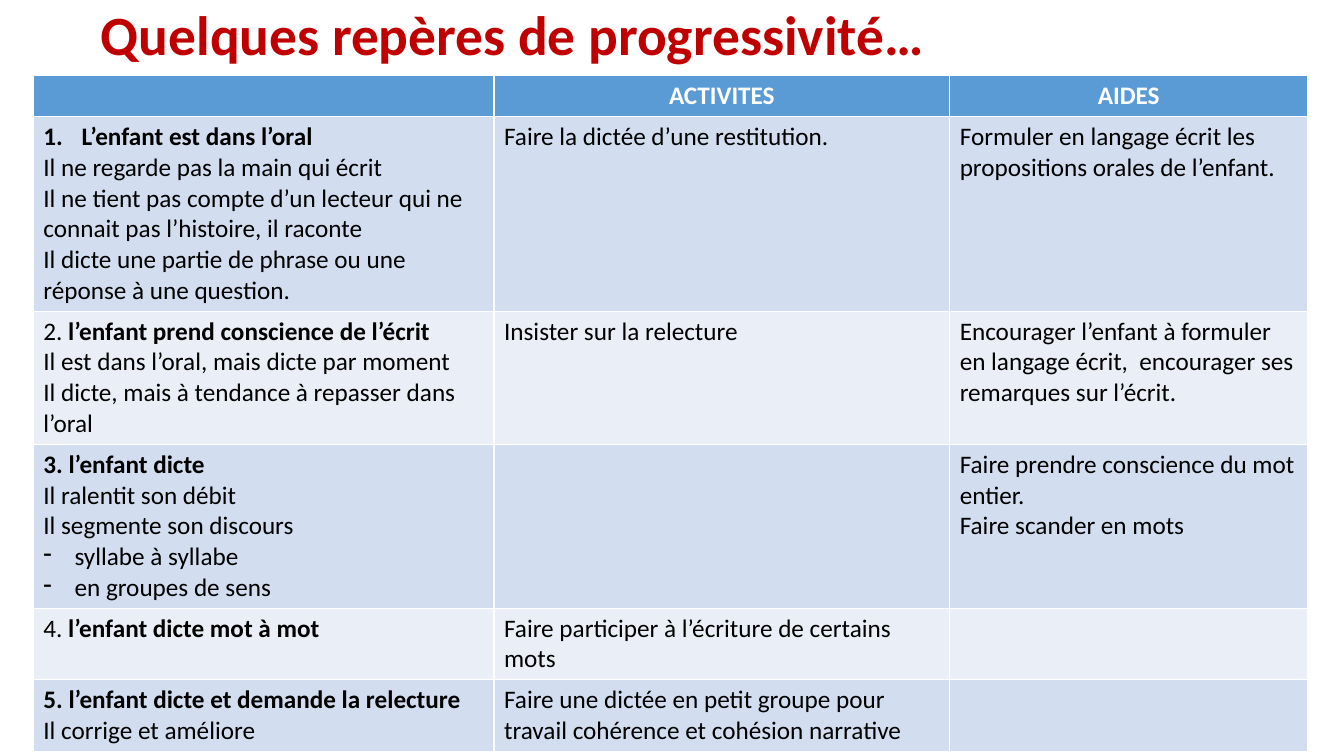
from typing import NamedTuple

from lxml.etree import SubElement
from pptx import Presentation
from pptx.dml.color import RGBColor
from pptx.enum.text import MSO_ANCHOR, MSO_AUTO_SIZE, PP_ALIGN
from pptx.oxml.ns import qn
from pptx.util import Inches, Pt

RED = RGBColor(0xC0, 0x00, 0x00)
BLUE = RGBColor(0x5B, 0x9B, 0xD5)
BAND_DARK = RGBColor(0xD2, 0xDE, 0xEF)
BAND_LIGHT = RGBColor(0xEA, 0xEF, 0xF7)
WHITE = RGBColor(0xFF, 0xFF, 0xFF)
BLACK = RGBColor(0x00, 0x00, 0x00)

FONT = "Calibri"
SLIDE_SIZE = (13.33, 7.5)
TITLE_BOX = (0.9, 0, 11.5, 0.75)
TABLE_BOX = (0.33, 0.75, 12.64, 6.7)
COLUMN_WIDTHS = (4.57, 4.52, 3.55)
ROW_LINES = (1, 6, 4, 5, 2, 2)
LINE_HEIGHT = 0.305
CELL_PADDING = 0.1

NUMBER = ("a:buAutoNum", {"type": "arabicPeriod"}, 0.38)
DASH = ("a:buChar", {"char": "-"}, 0.31)


class Line(NamedTuple):
    plain: str = ""
    bold: str = ""
    bullet: tuple = ()


HEADERS = ([], [Line(bold="ACTIVITES")], [Line(bold="AIDES")])
STAGES = (
    (
        [
            Line(bold="L’enfant est dans l’oral", bullet=NUMBER),
            Line("Il ne regarde pas la main qui écrit"),
            Line("Il ne tient pas compte d’un lecteur qui ne connait pas l’histoire, il raconte"),
            Line("Il dicte une partie de phrase ou une réponse à une question."),
        ],
        [Line("Faire la dictée d’une restitution.")],
        [Line("Formuler en langage écrit les propositions orales de l’enfant.")],
    ),
    (
        [
            Line("2. ", "l’enfant prend conscience de l’écrit"),
            Line("Il est dans l’oral, mais dicte par moment"),
            Line("Il dicte, mais à tendance à repasser dans l’oral"),
        ],
        [Line("Insister sur la relecture")],
        [Line("Encourager l’enfant à formuler en langage écrit,  encourager ses remarques sur l’écrit.")],
    ),
    (
        [
            Line(bold="3. l’enfant dicte"),
            Line("Il ralentit son débit"),
            Line("Il segmente son discours"),
            Line("syllabe à syllabe", bullet=DASH),
            Line("en groupes de sens", bullet=DASH),
        ],
        [],
        [Line("Faire prendre conscience du mot entier."), Line("Faire scander en mots")],
    ),
    (
        [Line("4. ", "l’enfant dicte mot à mot")],
        [Line("Faire participer à l’écriture de certains mots")],
        [],
    ),
    (
        [Line(bold="5. l’enfant dicte et demande la relecture"), Line("Il corrige et améliore")],
        [Line("Faire une dictée en petit groupe pour travail cohérence et cohésion narrative")],
        [],
    ),
)


def set_format(target, values):
    for name, value in values.items():
        setattr(target, name, value)


def add_run(paragraph, text, color, size, bold):
    run = paragraph.add_run()
    run.text = text
    set_format(run.font, {"name": FONT, "size": Pt(size), "bold": bold})
    run.font.color.rgb = color


def add_bullet(paragraph, bullet):
    tag, attributes, indent = bullet
    properties = paragraph._p.get_or_add_pPr()
    properties.set("marL", str(Inches(indent)))
    properties.set("indent", str(-Inches(indent)))
    SubElement(properties, qn(tag), attributes)


def fill_cell(cell, lines, fill, color, alignment):
    cell.fill.solid()
    cell.fill.fore_color.rgb = fill
    frame = cell.text_frame
    for index, line in enumerate(lines):
        paragraph = frame.add_paragraph() if index else frame.paragraphs[0]
        paragraph.alignment = alignment
        if line.bullet:
            add_bullet(paragraph, line.bullet)
        for text, bold in ((line.plain, False), (line.bold, True)):
            if text:
                add_run(paragraph, text, color, 18, bold)


def add_title(slide, box):
    title = slide.shapes.title
    set_format(title, dict(zip(("left", "top", "width", "height"), map(Inches, box))))
    frame = title.text_frame
    set_format(frame, {
        "vertical_anchor": MSO_ANCHOR.MIDDLE,
        "auto_size": MSO_AUTO_SIZE.NONE,
        "word_wrap": True,
    })
    paragraph = frame.paragraphs[0]
    set_format(paragraph, {"alignment": PP_ALIGN.LEFT, "line_spacing": 0.9})
    add_run(paragraph, "Quelques repères de progressivité…", RED, 39.6, True)


def add_stage_table(slide, box):
    rows = (HEADERS, *STAGES)
    table = slide.shapes.add_table(len(rows), len(HEADERS), *map(Inches, box)).table
    for column, width in zip(table.columns, COLUMN_WIDTHS):
        column.width = Inches(box[2] * width / sum(COLUMN_WIDTHS))
    for row, line_count in zip(table.rows, ROW_LINES):
        row.height = Inches(line_count * LINE_HEIGHT + CELL_PADDING)
    for row_index, (row, contents) in enumerate(zip(table.rows, rows)):
        if row_index == 0:
            style = (BLUE, WHITE, PP_ALIGN.CENTER)
        else:
            style = (BAND_DARK if row_index % 2 else BAND_LIGHT, BLACK, PP_ALIGN.LEFT)
        for cell, lines in zip(row.cells, contents):
            fill_cell(cell, lines, *style)


def main():
    presentation = Presentation()
    presentation.slide_width, presentation.slide_height = map(Inches, SLIDE_SIZE)
    slide = presentation.slides.add_slide(presentation.slide_layouts[5])
    add_title(slide, TITLE_BOX)
    add_stage_table(slide, TABLE_BOX)
    presentation.save("out.pptx")


if __name__ == "__main__":
    main()
